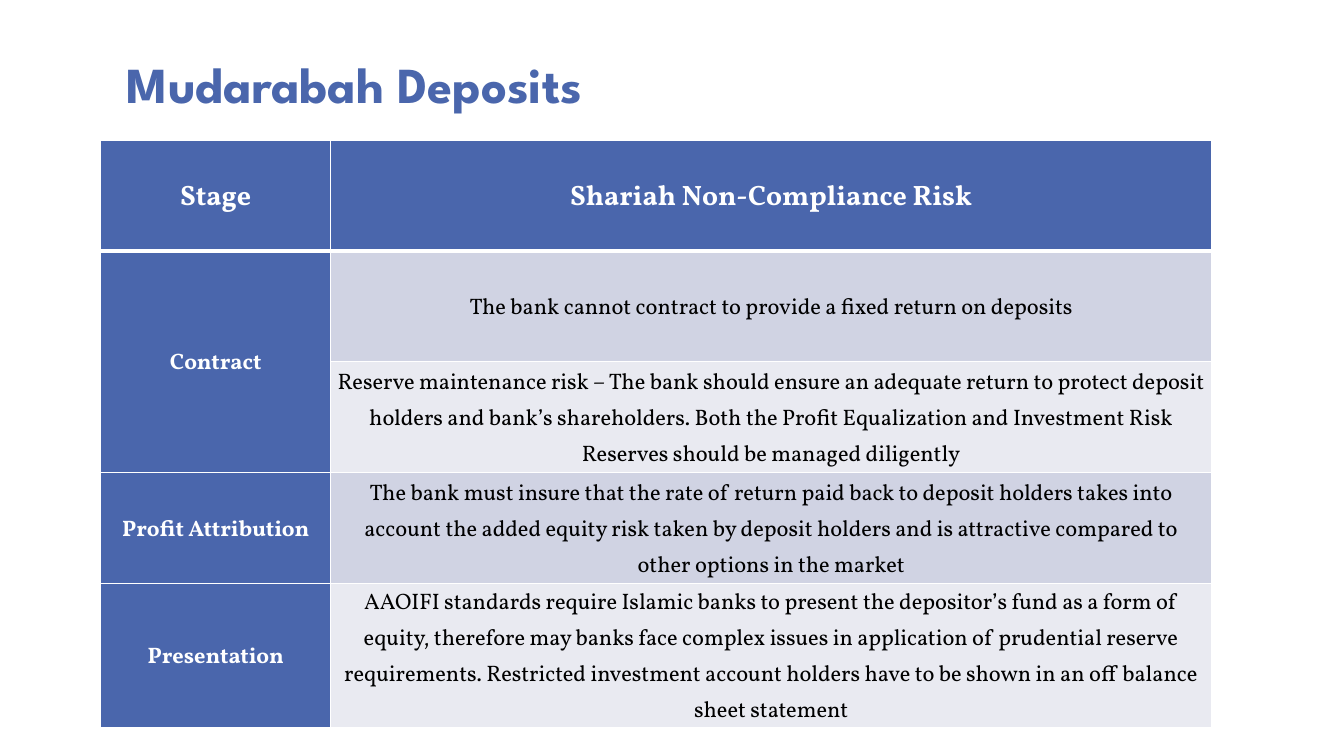
import pptx
import pptx.util
import pptx.dml.color
import pptx.enum.text
import pptx.oxml
import pptx.oxml.ns
from pptx.util import Inches

# Content
TITLE = "Mudarabah Deposits"
HEADINGS = ("Stage", "Shariah Non-Compliance Risk")
STAGES = [
    ("Contract", [
        "The bank cannot contract to provide a fixed return on deposits",
        "Reserve maintenance risk – The bank should ensure an adequate return to protect "
        "deposit holders and bank’s shareholders. Both the Profit Equalization and "
        "Investment Risk Reserves should be managed diligently"]),
    ("Profit Attribution", [
        "The bank must insure that the rate of return paid back to deposit holders takes "
        "into account the added equity risk taken by deposit holders and is attractive "
        "compared to other options in the market"]),
    ("Presentation", [
        "AAOIFI standards require Islamic banks to present the depositor’s fund as a form "
        "of equity, therefore may banks face complex issues in application of prudential "
        "reserve requirements. Restricted investment account holders have to be shown in "
        "an off balance sheet statement"]),
]

# Formats
BLUE, WHITE, BLACK = "4A66AC", "FFFFFF", "000000"
BANDS = ("D0D3E3", "E9EAF1")
COLUMN_WIDTHS = (2.28, 8.74)
ROW_HEIGHTS = (1.1, 1.1, 1.1, 1.1, 1.43)
TITLE_FONT = {"name": "League Spartan", "size": pptx.util.Pt(36), "bold": True}
HEADING_FONT = {"name": "Vollkorn", "size": pptx.util.Pt(20), "bold": True}
STAGE_FONT = {"name": "Vollkorn", "size": pptx.util.Pt(16), "bold": True}
RISK_FONT = {**STAGE_FONT, "bold": False}
CELL_FORMAT = {
    "margin_left": Inches(0.06), "margin_right": Inches(0.06),
    "margin_top": 0, "margin_bottom": 0,
    "vertical_anchor": pptx.enum.text.MSO_ANCHOR.MIDDLE,
}


def rgb(value):
    return pptx.dml.color.RGBColor.from_string(value)


def apply(target, values):
    for key, value in values.items():
        setattr(target, key, value)


def write(frame, text, font, color, spacing, align):
    paragraph = frame.paragraphs[0]
    apply(paragraph, {"line_spacing": spacing, "alignment": align})
    run = paragraph.add_run()
    run.text = text
    apply(run.font, font)
    run.font.color.rgb = rgb(color)


def draw_borders(cell, bottom, top):
    properties = cell._tc.get_or_add_tcPr()
    widths = {"lnL": 1, "lnR": 1, "lnT": top, "lnB": bottom}
    for position, (side, points) in enumerate(widths.items()):
        properties.insert(position, pptx.oxml.parse_xml(
            f'<a:{side} {pptx.oxml.ns.nsdecls("a")} w="{pptx.util.Pt(points)}">'
            f'<a:solidFill><a:srgbClr val="{WHITE}"/></a:solidFill></a:{side}>'))


def fill_cell(cell, text, font, color, background):
    apply(cell, CELL_FORMAT)
    cell.fill.solid()
    cell.fill.fore_color.rgb = rgb(background)
    write(cell.text_frame, text, font, color, 1.15, pptx.enum.text.PP_ALIGN.CENTER)


def main():
    deck = pptx.Presentation()
    deck.slide_width, deck.slide_height = Inches(13.33), Inches(7.5)
    slide = deck.slides.add_slide(deck.slide_layouts[6])

    # Title
    title = slide.shapes.add_textbox(Inches(1.16), 0, Inches(9.5), Inches(1.17)).text_frame
    apply(title, {"word_wrap": True, "vertical_anchor": pptx.enum.text.MSO_ANCHOR.BOTTOM})
    write(title, TITLE, TITLE_FONT, BLUE, 0.8, pptx.enum.text.PP_ALIGN.LEFT)

    # Risk table
    risks = slide.shapes.add_table(
        len(ROW_HEIGHTS), len(COLUMN_WIDTHS), Inches(1), Inches(1.39),
        Inches(sum(COLUMN_WIDTHS)), Inches(sum(ROW_HEIGHTS))).table
    for column, width in zip(risks.columns, COLUMN_WIDTHS):
        column.width = Inches(width)
    for row, height in zip(risks.rows, ROW_HEIGHTS):
        row.height = Inches(height)

    # Heading row
    for column, heading in enumerate(HEADINGS):
        fill_cell(risks.cell(0, column), heading, HEADING_FONT, WHITE, BLUE)

    # Stages, each spanning its own risks
    row = 1
    for stage, stage_risks in STAGES:
        stage_cell = risks.cell(row, 0)
        if len(stage_risks) > 1:
            stage_cell.merge(risks.cell(row + len(stage_risks) - 1, 0))
        fill_cell(stage_cell, stage, STAGE_FONT, WHITE, BLUE)
        for risk in stage_risks:
            fill_cell(risks.cell(row, 1), risk, RISK_FONT, BLACK, BANDS[(row - 1) % 2])
            row += 1

    # White rules, heavier under the headings
    for row in range(len(ROW_HEIGHTS)):
        for column in range(len(COLUMN_WIDTHS)):
            draw_borders(risks.cell(row, column),
                         bottom=3 if row == 0 else 1, top=3 if row == 1 else 1)

    deck.save("out.pptx")


if __name__ == "__main__":
    main()
